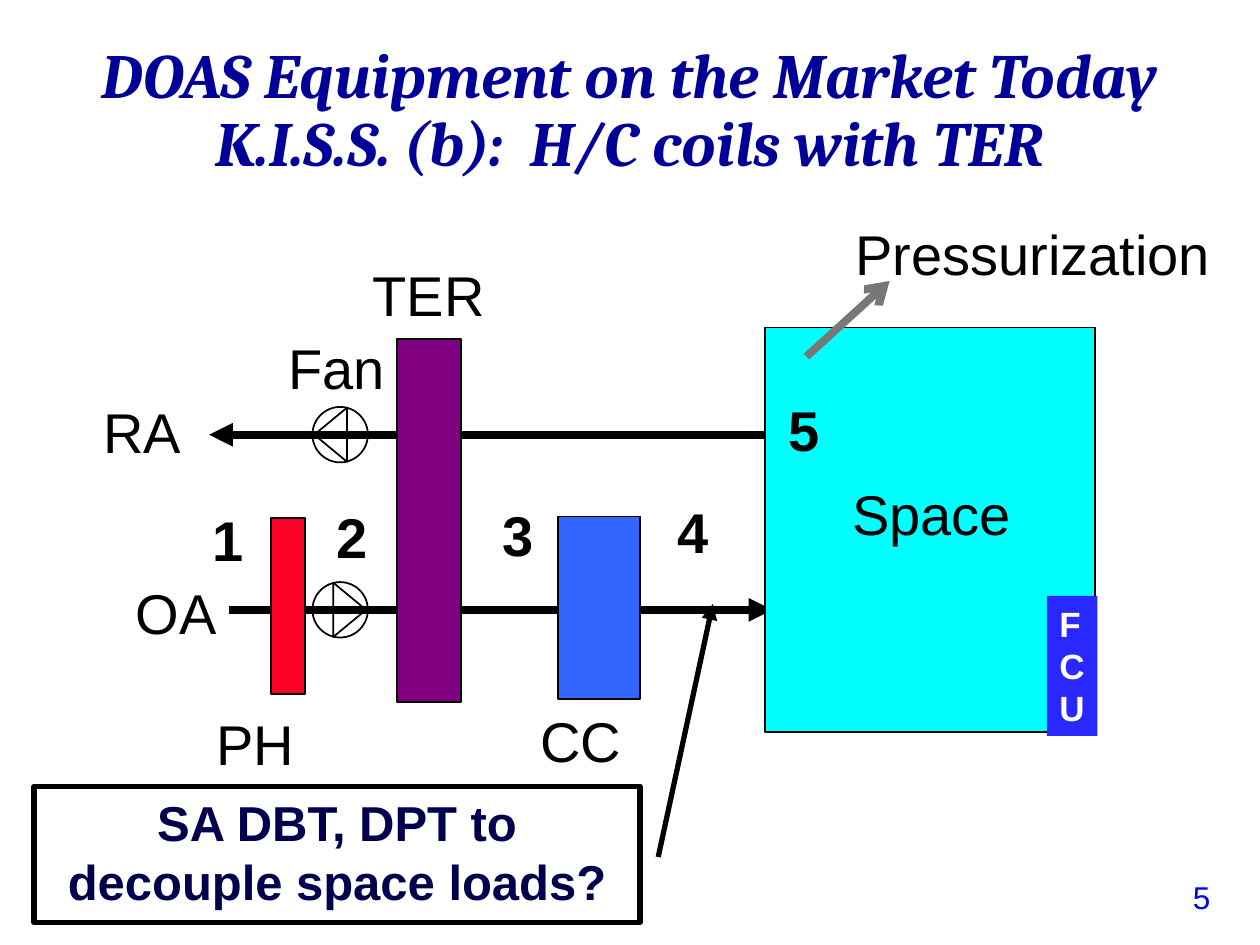
from lxml import etree
from pptx import Presentation
from pptx import util as u
from pptx.dml.color import RGBColor
from pptx.enum import shapes, text
from pptx.oxml.ns import qn

C = {"title": "000099", "ink": "000000", "ter": "800080", "preheat": "FC0128",
     "cool": "3366FF", "space": "00FFFF", "fcu": "2929FF", "note": "00004C",
     "press": "777777", "page": "0000FF", "white": "FFFFFF"}
COLS, ROWS = 100, 75
CELL = u.Inches(10) // COLS
M = shapes.MSO_SHAPE
ALIGN, ANCHOR = text.PP_ALIGN, text.MSO_ANCHOR


def rgb(name):
    return RGBColor.from_string(C[name])


def g(*cells):
    return [round(c * CELL) for c in cells]


def write(sp, lines, size, color, bold=False, italic=False, font="Arial",
          align=ALIGN.LEFT, anchor=ANCHOR.TOP, wrap=True):
    tf = sp.text_frame
    tf.word_wrap = wrap
    tf.vertical_anchor = anchor
    p = tf.paragraphs[0]
    p.alignment = align
    for i, line in enumerate(lines):
        if i:
            p.add_line_break()
        r = p.add_run()
        r.text = line
        f = r.font
        f.name, f.size, f.bold, f.italic = font, u.Pt(size), bold, italic
        f.color.rgb = rgb(color)
    return p


def label(s, x, y, w, txt, bold=False):
    sp = s.shapes.add_textbox(*g(x, y, w, 6.4))
    write(sp, [txt], 32, "ink", bold, wrap=False)


def block(s, kind, x, y, w, h, fill=None, line=1):
    sp = s.shapes.add_shape(kind, *g(x, y, w, h))
    sp.shadow.inherit = False
    if fill:
        sp.fill.solid()
        sp.fill.fore_color.rgb = rgb(fill)
    else:
        sp.fill.background()
    if line:
        sp.line.color.rgb = rgb("ink")
        sp.line.width = u.Pt(line)
    else:
        sp.line.fill.background()
    return sp


def arrowhead(sp, kind="triangle"):
    etree.SubElement(sp.line._get_or_add_ln(), qn("a:tailEnd"), type=kind)


def arrow(s, x1, y1, x2, y2, color="ink", kind="triangle"):
    cn = s.shapes.add_connector(shapes.MSO_CONNECTOR.STRAIGHT, *g(x1, y1, x2, y2))
    cn.line.color.rgb = rgb(color)
    cn.line.width = u.Pt(4.5)
    arrowhead(cn, kind)
    etree.SubElement(cn._element.spPr, qn("a:effectLst"))


def heading(s, x, y, w, h):
    sp = s.shapes.add_textbox(*g(x, y, w, h))
    p = write(sp, ["DOAS Equipment on the Market Today",
                   "K.I.S.S. (b):  H/C coils with TER"],
              36, "title", True, True, "Cambria", ALIGN.CENTER)
    p.line_spacing = 0.9


def fan(s, cx, cy, way):
    tri = block(s, M.ISOSCELES_TRIANGLE, cx + way * 0.75 - 2.15, cy - 1.3, 4.3, 2.6)
    tri.rotation = way * 90
    block(s, M.OVAL, cx - 2.2, cy - 2.2, 4.4, 4.4)


def air_handler(s, x, y, w, h):
    ra, oa = y + 14.3, y + 28.2
    arrow(s, x + w, ra, x + 9.4, ra)
    arrow(s, x + 11, oa, x + w + 0.2, oa)
    block(s, M.RECTANGLE, x + 24.3, y + 6.7, 5.1, 28.8, "ter")
    block(s, M.RECTANGLE, x + 14.3, y + 20.9, 2.7, 14, "preheat")
    block(s, M.RECTANGLE, x + 37.1, y + 20.8, 6.5, 14.5, "cool")
    fan(s, x + 19.8, ra, -1)
    fan(s, x + 19.8, oa, 1)
    for dx, dy, dw, txt in [(21.4, 0, 13.5, "TER"), (14.7, 5.8, 11.2, "Fan"),
                            (0, 10.9, 9.2, "RA"), (2.6, 25.2, 8.5, "OA"),
                            (9, 35.6, 14.4, "PH"), (34.7, 35.4, 15.2, "CC")]:
        label(s, x + dx, y + dy, dw, txt)
    for i, dx in enumerate([8.7, 18.5, 31.7, 45.6]):
        label(s, x + dx, y + 19.4 - 0.2 * i, 5, str(i + 1), True)


def space(s, x, y, w, h):
    block(s, M.RECTANGLE, x, y, w, h, "space")
    label(s, x + 0.9, y + 4.9, 5.3, "5", True)
    sp = block(s, M.RECTANGLE, x + 0.4, y + 11.6, w - 0.5, 6.4, "space", 0)
    write(sp, ["Space"], 32, "ink", align=ALIGN.CENTER)
    arrow(s, x + 3.3, y + 2.3, x + 9.9, y - 3.7, "press", "arrow")
    label(s, x + 6.2, y - 9.1, 30.9, "Pressurization")
    sp = block(s, M.RECTANGLE, x + w - 3.8, y + 21.3, 4, 11.1, "fcu", 0)
    write(sp, ["FCU"], 20, "white", True)


def question(s, x, y, w, h):
    sp = block(s, M.LINE_CALLOUT_1, x, y, w, h, line=3)
    for i, share in enumerate([0.52, 1.03, -1.34, 1.12]):
        sp.adjustments[i] = share
    arrowhead(sp)
    write(sp, ["SA DBT, DPT to decouple space loads?"], 28, "note", True,
          align=ALIGN.CENTER)


def page_number(s, x, y, w, h):
    sp = s.shapes.add_textbox(*g(x, y, w, h))
    write(sp, ["5"], 18, "page")


def main():
    prs = Presentation()
    prs.slide_width, prs.slide_height = g(COLS, ROWS)
    s = prs.slides.add_slide(prs.slide_layouts[6])
    page_number(s, 93.7, 69.2, 6.3, 4)
    heading(s, 0, 3, COLS, 12.2)
    air_handler(s, 7.2, 20.2, 53.9, 41.8)
    space(s, 60.7, 26, 26.2, 32.1)
    question(s, 2.7, 62.4, 48.1, 10.8)
    prs.save("out.pptx")


if __name__ == "__main__":
    main()
